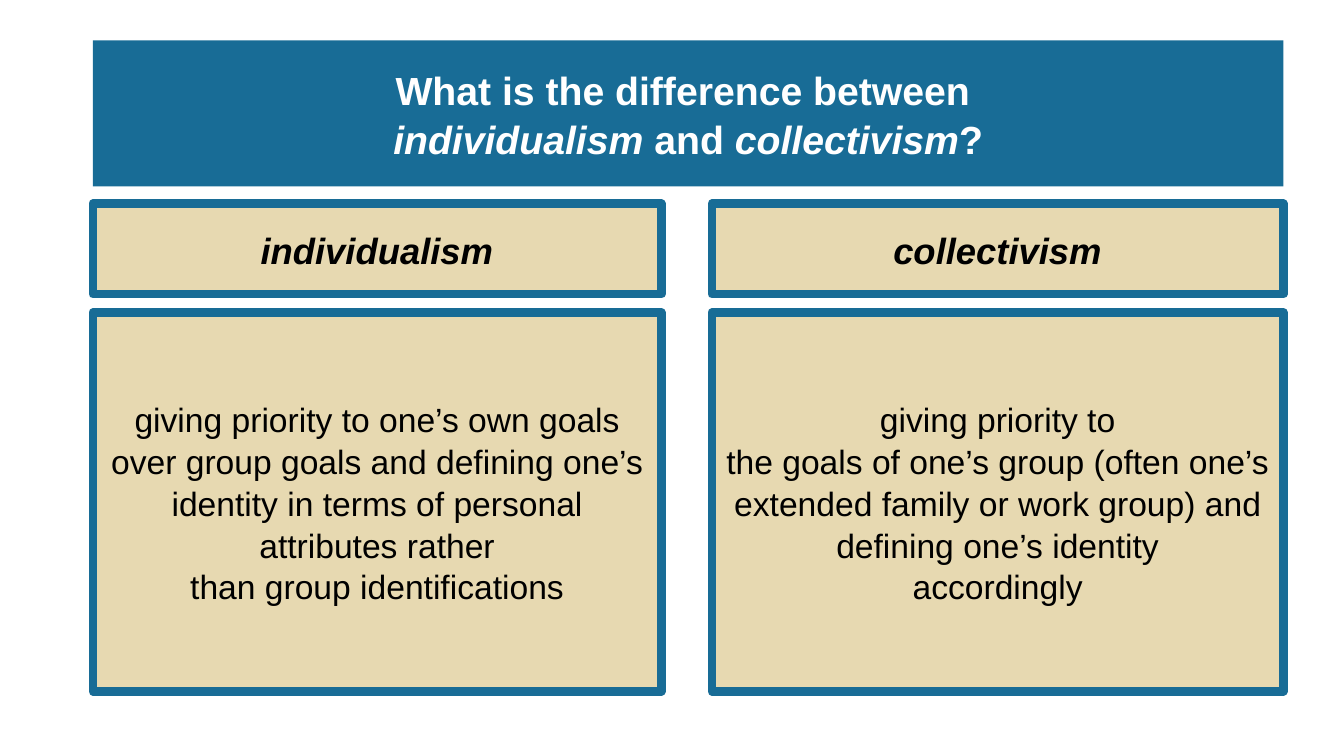
from lxml import etree
from pptx import Presentation
from pptx.dml.color import RGBColor
from pptx.enum import shapes, text
from pptx.oxml import ns
from pptx.util import Inches, Pt

BLUE = RGBColor(0x18, 0x6C, 0x96)
SAND = RGBColor(0xE7, 0xD9, 0xB1)
WHITE = RGBColor(0xFF, 0xFF, 0xFF)
BLACK = RGBColor(0x00, 0x00, 0x00)

presentation = Presentation()
presentation.slide_width = Inches(13.33)
presentation.slide_height = Inches(7.5)
slide = presentation.slides.add_slide(presentation.slide_layouts[6])


def add_box(left, top, width, height, fill):
    shape = slide.shapes.add_shape(
        shapes.MSO_SHAPE.RECTANGLE,
        Inches(left), Inches(top), Inches(width), Inches(height))
    shape.shadow.inherit = False
    shape.fill.solid()
    shape.fill.fore_color.rgb = fill
    shape.text_frame.word_wrap = True
    shape.text_frame.vertical_anchor = text.MSO_ANCHOR.MIDDLE
    return shape


def format_paragraph(paragraph, color, **font_values):
    paragraph.alignment = text.PP_ALIGN.CENTER
    paragraph.line_spacing = 1.04
    paragraph.font.color.rgb = color
    for name, value in {"name": "Arial", **font_values}.items():
        setattr(paragraph.font, name, value)


title = add_box(0.92, 0.4, 11.81, 1.45, BLUE)
title.line.fill.background()
paragraph = title.text_frame.paragraphs[0]
format_paragraph(paragraph, WHITE, size=Pt(28), bold=True)
paragraph.add_run().text = "What is the difference between "
paragraph.add_line_break()
for words, italic in [("individualism", True), (" and ", False),
                      ("collectivism", True), ("?", False)]:
    run = paragraph.add_run()
    run.text = words
    run.font.italic = italic

columns = [
    (0.92, 5.64, "individualism", [
        "giving priority to one’s own goals over group goals and defining "
        "one’s identity in terms of personal attributes rather",
        "than group identifications"]),
    (7.06, 5.67, "collectivism", [
        "giving priority to",
        "the goals of one’s group (often one’s extended family or work group) "
        "and defining one’s identity",
        "accordingly"]),
]
heading_font = {"size": Pt(26), "bold": True, "italic": True}
definition_font = {"size": Pt(24)}

for left, width, heading, definition in columns:
    for top, height, lines, font_values in [
            (2.02, 0.9, [heading], heading_font),
            (3.1, 3.76, definition, definition_font)]:
        box = add_box(left, top, width, height, SAND)
        box.line.color.rgb = BLUE
        box.line.width = Pt(6)
        etree.SubElement(box.line._get_or_add_ln(), ns.qn("a:round"))
        box.text_frame.text = "\n".join(lines)
        for paragraph in box.text_frame.paragraphs:
            format_paragraph(paragraph, BLACK, **font_values)

presentation.save("out.pptx")
